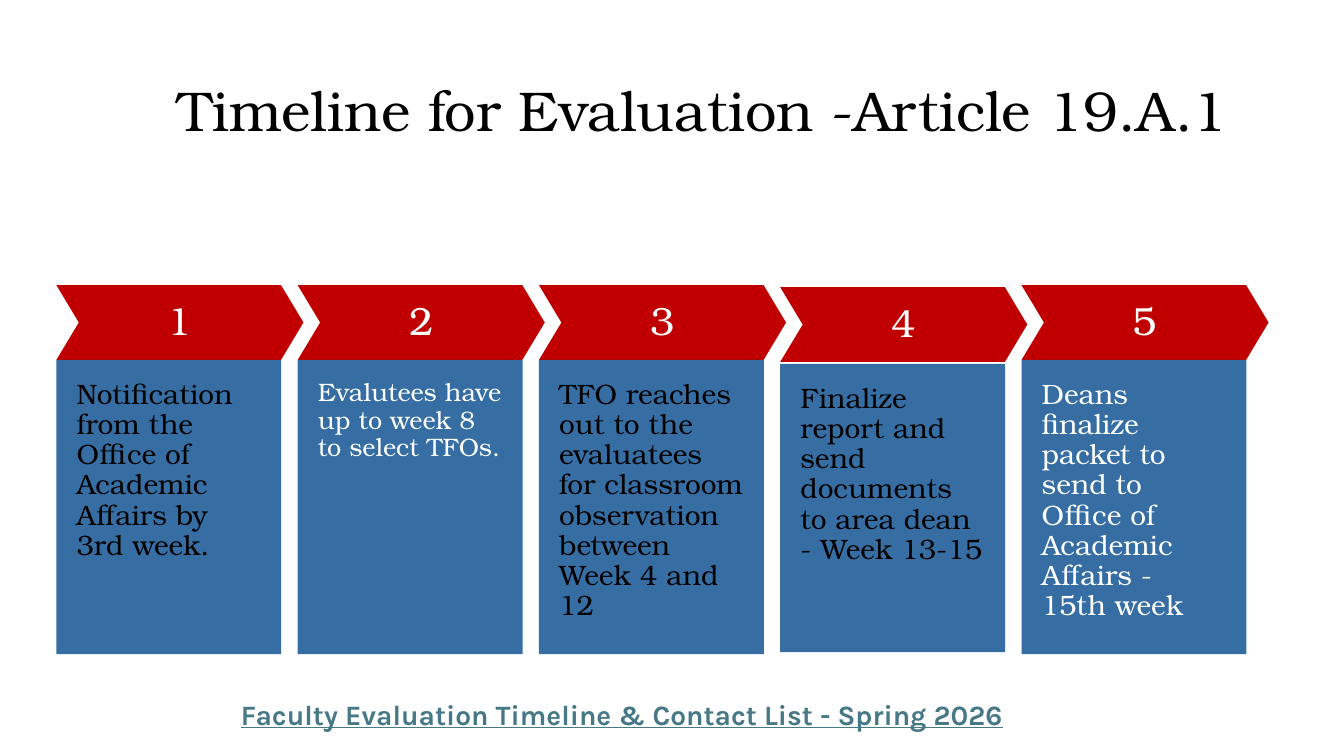
import pptx
import pptx.dml.color
import pptx.enum.shapes
import pptx.enum.text
import pptx.oxml
import pptx.oxml.ns
import pptx.util

Inches = pptx.util.Inches
SHAPES = pptx.enum.shapes.MSO_SHAPE
ALIGN = pptx.enum.text.PP_ALIGN
ANCHOR = pptx.enum.text.MSO_ANCHOR

COLORS = {
    "black": "000000",
    "white": "FFFFFF",
    "chevron": "C00000",
    "card": "215F9A",
    "footer": "467886",
}
SERIF = "TeX Gyre Bonum"
LEFT, PITCH = 0.56, 2.393
CHEVRON_WIDTH, CHEVRON_HEIGHT = 2.45, 0.74
CARD_WIDTH = 2.23


def write_text(shape, text, size, color, font=SERIF, align=ALIGN.LEFT,
               anchor=ANCHOR.TOP, insets=(0.1, 0.05, 0.1, 0.05),
               spacing=0.9, bold=False, underline=False):
    """Fill a shape with one paragraph; insets run left, top, right, bottom."""
    frame = shape.text_frame
    frame.word_wrap = True
    frame.vertical_anchor = anchor
    (frame.margin_left, frame.margin_top,
     frame.margin_right, frame.margin_bottom) = map(Inches, insets)
    paragraph = frame.paragraphs[0]
    paragraph.alignment = align
    paragraph.line_spacing = spacing
    run = paragraph.add_run()
    run.text = text
    run.font.name = font
    run.font.size = pptx.util.Pt(size)
    run.font.bold = bold
    run.font.underline = underline
    run.font.color.rgb = pptx.dml.color.RGBColor.from_string(COLORS[color])


def add_block(slide, preset, color, left, top, width, height):
    shape = slide.shapes.add_shape(
        preset, Inches(left), Inches(top), Inches(width), Inches(height))
    shape.shadow.inherit = False
    shape.fill.solid()
    shape.fill.fore_color.rgb = pptx.dml.color.RGBColor.from_string(COLORS[color])
    shape.line.fill.background()
    return shape


presentation = pptx.Presentation()
presentation.slide_width = Inches(13.33)
presentation.slide_height = Inches(7.5)
slide = presentation.slides.add_slide(presentation.slide_layouts[6])

title = slide.shapes.add_textbox(Inches(0.74), Inches(0.7), Inches(12.46), Inches(1.5))
write_text(title, "Timeline for Evaluation -Article 19.A.1", 40, "black",
           align=ALIGN.CENTER, insets=(0.1, 0.13, 0.1, 0.05))

# Text, size, text colour, chevron top, card top, card height
steps = [
    ("Notification from the Office of Academic Affairs by 3rd week.",
     20, "black", 2.83, 3.57, 2.92),
    ("Evalutees have up to week 8 to select TFOs.",
     18, "white", 2.83, 3.57, 2.92),
    ("TFO reaches out to the evaluatees for classroom observation between Week 4 and 12",
     20, "black", 2.83, 3.57, 2.92),
    ("Finalize report and send documents to area dean - Week 13-15",
     20, "black", 2.85, 3.61, 2.86),
    ("Deans finalize packet to send to Office of Academic Affairs -  15th week",
     20, "white", 2.83, 3.57, 2.92),
]
for index, (text, size, color, chevron_top, card_top, card_height) in enumerate(steps):
    left = LEFT + index * PITCH
    chevron = add_block(slide, SHAPES.CHEVRON, "chevron",
                        left, chevron_top, CHEVRON_WIDTH, CHEVRON_HEIGHT)
    chevron.adjustments[0] = 0.3
    write_text(chevron, str(index + 1), 28, "white", align=ALIGN.CENTER,
               anchor=ANCHOR.MIDDLE, insets=(0.09, 0.09, 0.09, 0.09))

    card = add_block(slide, SHAPES.RECTANGLE, "card",
                     left, card_top, CARD_WIDTH, card_height)
    fill_color = card.fill._xPr.find(".//" + pptx.oxml.ns.qn("a:srgbClr"))
    alpha = pptx.oxml.parse_xml(
        f'<a:alpha {pptx.oxml.ns.nsdecls("a")} val="90000"/>')
    fill_color.append(alpha)
    write_text(card, text, size, color, insets=(0.2, 0.2, 0.2, 0.4))

footer = slide.shapes.add_textbox(Inches(0.85), Inches(6.87), Inches(10.64), Inches(0.44))
write_text(footer, "Faculty Evaluation Timeline & Contact List - Spring 2026", 20,
           "footer", font="Karla", align=ALIGN.CENTER, spacing=1.0,
           bold=True, underline=True)

presentation.save("out.pptx")
